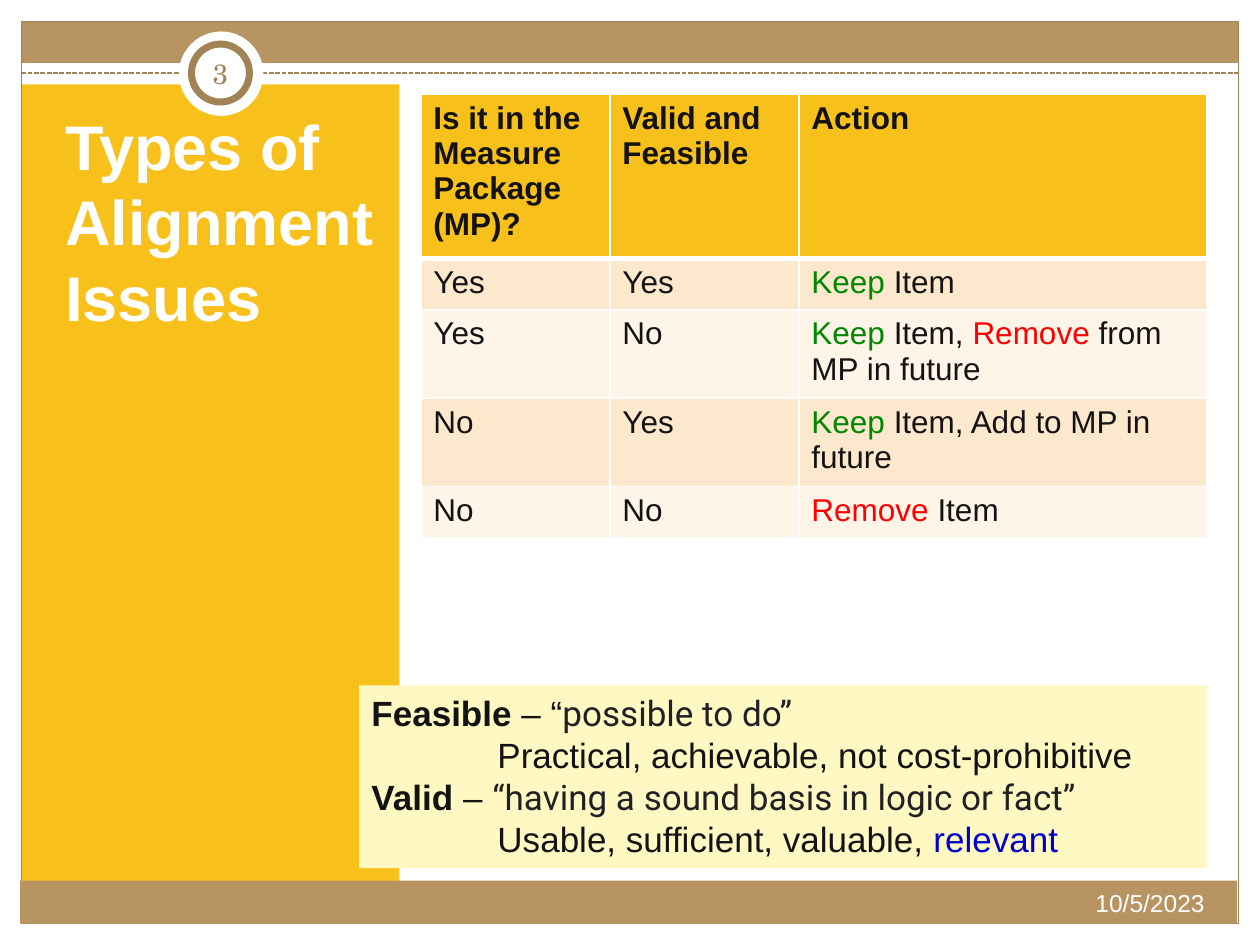
from dataclasses import dataclass

from lxml.etree import SubElement
from pptx import Presentation
from pptx.dml.color import RGBColor as Rgb
from pptx.enum.dml import MSO_LINE as Dash
from pptx.enum.shapes import MSO_CONNECTOR as Conn, MSO_SHAPE as Shape
from pptx.enum.text import MSO_ANCHOR as Anchor, PP_ALIGN as Align
from pptx.oxml.ns import qn
from pptx.util import Pt

PX = 9144  # EMU in one px, 100 px to the inch


@dataclass(frozen=True)
class Theme:
    white: str = "FFFFFF"
    tan: str = "B79462"
    brown: str = "A18356"
    gold: str = "F8C01B"
    cream: str = "FFF8C2"
    bands: tuple = ("FCE8CD", "FEF4E8")
    ink: str = "141313"
    quote: str = "202124"
    keep: str = "008800"
    drop: str = "FF0000"
    link: str = "0000CC"
    sans: str = "Arial"
    soft: str = "Roboto"
    serif: str = "TeX Gyre Schola"
    title: int = 36
    note: int = 20
    cell: int = 18
    page: int = 16
    date: int = 14


class Deck:
    def __init__(self, theme, width, height):
        self.theme = theme
        self.prs = Presentation()
        self.prs.slide_width, self.prs.slide_height = width * PX, height * PX
        self.slide = self.prs.slides.add_slide(self.prs.slide_layouts[6])
        self.shapes = self.slide.shapes

    def shape(self, box, fill=None, line=None, weight=1, kind=Shape.RECTANGLE):
        item = self.shapes.add_shape(kind, *(n * PX for n in box))
        item.shadow.inherit = False
        if fill:
            item.fill.solid()
            item.fill.fore_color.rgb = Rgb.from_string(fill)
        else:
            item.fill.background()
        if line:
            item.line.color.rgb = Rgb.from_string(line)
            item.line.width = Pt(weight)
        else:
            item.line.fill.background()
        return item

    def rule(self, x1, y1, x2, y2, color, weight):
        line = self.shapes.add_connector(
            Conn.STRAIGHT, x1 * PX, y1 * PX, x2 * PX, y2 * PX)
        line.line.color.rgb = Rgb.from_string(color)
        line.line.width = Pt(weight)
        line.line.dash_style = Dash.SQUARE_DOT
        SubElement(line._element.spPr, qn("a:effectLst"))

    def put(self, para, parts, size):
        """Fill a paragraph from (text, color, bold, font) parts; the last three may be left out."""
        plain = (None, self.theme.ink, False, self.theme.sans)
        for part in parts:
            text, color, bold, face = part + plain[len(part):]
            run = para.add_run()
            run.text = text
            run.font.size, run.font.bold, run.font.name = Pt(size), bold, face
            run.font.color.rgb = Rgb.from_string(color)

    def text(self, box, part, size, align=Align.LEFT, anchor=Anchor.TOP,
             inset=None, pitch=None):
        frame = self.shapes.add_textbox(*(n * PX for n in box)).text_frame
        frame.word_wrap = True
        frame.vertical_anchor = anchor
        if inset is not None:
            frame.margin_left = frame.margin_right = inset * PX
            frame.margin_top = frame.margin_bottom = inset * PX
        para = frame.paragraphs[0]
        para.alignment = align
        if pitch:
            para.line_spacing = Pt(pitch)
        self.put(para, [part], size)

    def note(self, box, fill, lines, size, pitch):
        """Draw a filled box; each line is (indent, parts)."""
        frame = self.shape(box, fill).text_frame
        frame.word_wrap = True
        frame.vertical_anchor = Anchor.TOP
        for i, (indent, parts) in enumerate(lines):
            para = frame.add_paragraph() if i else frame.paragraphs[0]
            para._p.get_or_add_pPr().set("marL", str(indent * PX))
            para.alignment = Align.LEFT
            para.line_spacing = Pt(pitch)
            self.put(para, parts, size)

    def edge(self, cell, side, weight):
        line = SubElement(cell._tc.get_or_add_tcPr(), qn(f"a:ln{side}"),
                          w=str(Pt(weight)))
        fill = SubElement(line, qn("a:solidFill"))
        SubElement(fill, qn("a:srgbClr"), val=self.theme.white)

    def table(self, left, top, cols, height, rows):
        th = self.theme
        grid = self.shapes.add_table(
            len(rows), len(cols), left * PX, top * PX,
            sum(cols) * PX, height * len(rows) * PX).table
        for col, width in zip(grid.columns, cols):
            col.width = width * PX
        for r, row in enumerate(rows):
            fill = th.bands[(r - 1) % 2] if r else th.gold
            for c, parts in enumerate(row):
                cell = grid.cell(r, c)
                for side in "LRTB":
                    heavy = (r, side) in ((0, "B"), (1, "T"))
                    self.edge(cell, side, 3 if heavy else 1)
                cell.fill.solid()
                cell.fill.fore_color.rgb = Rgb.from_string(fill)
                self.put(cell.text_frame.paragraphs[0], parts, th.cell)


def main():
    th = Theme()
    deck = Deck(th, 1000, 750)

    deck.shape((17, 17, 966, 33), th.tan)
    for margin in ((0, 733, 1000, 17), (983, 0, 17, 750),
                   (0, 0, 1000, 13), (0, 0, 17, 750)):
        deck.shape(margin, th.white)
    deck.shape((17, 67, 300, 642), th.gold)
    deck.shape((17, 17, 966, 716), line=th.brown, weight=0.75)
    deck.rule(17, 58, 983, 58, th.brown, 0.9)
    deck.shape((142, 25, 67, 67), th.white, kind=Shape.OVAL)
    deck.shape((152, 35, 46, 46), th.white, th.brown, 4, Shape.OVAL)
    deck.shape((16, 699, 966, 34), th.tan)

    deck.text((42, 100, 265, 170), ("Types of Alignment Issues", th.white, True),
              th.title, anchor=Anchor.BOTTOM, pitch=43.2)
    deck.text((150, 34, 50, 48), ("3", th.brown, False, th.serif), th.page,
              Align.CENTER, Anchor.MIDDLE, inset=5)
    deck.text((633, 700, 333, 40), ("10/5/2023", th.white), th.date, Align.RIGHT)

    heads = ("Is it in the Measure Package (MP)?", "Valid and Feasible", "Action")
    keep, drop = ("Keep", th.keep), ("Remove", th.drop)
    yes, no = [("Yes",)], [("No",)]
    deck.table(334, 75, (150, 150, 324), 41, [
        [[(head, th.ink, True)] for head in heads],
        [yes, yes, [keep, (" Item",)]],
        [yes, no, [keep, (" Item, ",), drop, (" from MP in future",)]],
        [no, yes, [keep, (" Item, Add to MP in future",)]],
        [no, no, [drop, (" Item",)]],
    ])

    deck.note((285, 544, 673, 145), th.cream, [
        (0, [("Feasible", th.ink, True), (" – “",),
             ("possible to do”", th.quote, False, th.soft)]),
        (100, [("Practical, achievable, not cost-prohibitive",)]),
        (0, [("Valid", th.ink, True), (" – ",),
             ("“having a sound basis in logic or fact”", th.quote, False, th.soft)]),
        (100, [("Usable, sufficient, valuable, ",), ("relevant", th.link)]),
    ], th.note, pitch=24)

    deck.prs.save("out.pptx")


if __name__ == "__main__":
    main()
